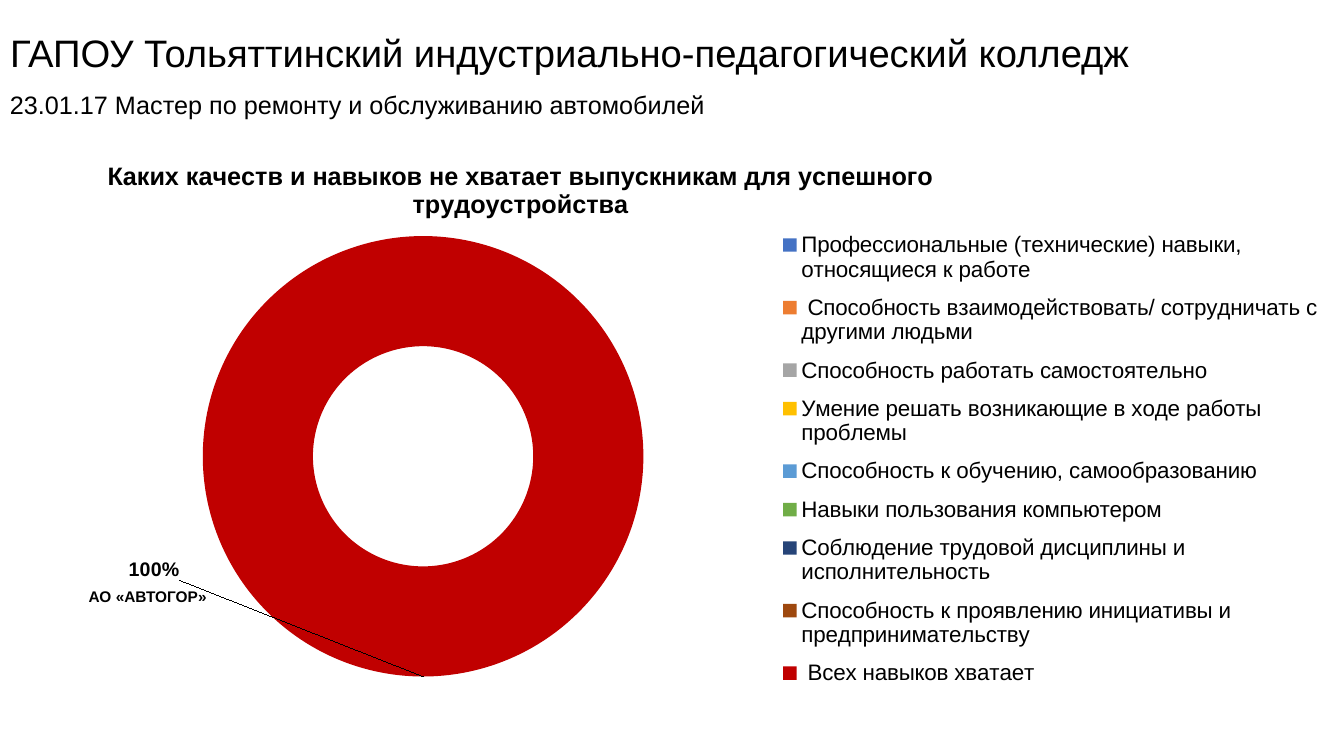
from lxml.etree import SubElement
from pptx import Presentation
from pptx.chart.data import CategoryChartData
from pptx.dml.color import RGBColor
from pptx.enum.chart import XL_CHART_TYPE, XL_LEGEND_POSITION
from pptx.enum.text import MSO_ANCHOR, MSO_AUTO_SIZE, PP_ALIGN
from pptx.oxml.ns import qn
from pptx.util import Inches, Pt

COLORS = {"text": "000000"}
SKILLS = {
    "Профессиональные (технические) навыки, относящиеся к работе": "4472C4",
    " Способность взаимодействовать/ сотрудничать с другими людьми": "ED7D31",
    "Способность работать самостоятельно": "A5A5A5",
    "Умение решать возникающие в ходе работы проблемы": "FFC000",
    "Способность к обучению, самообразованию": "5B9BD5",
    "Навыки пользования компьютером": "70AD47",
    "Соблюдение трудовой дисциплины и исполнительность": "264478",
    "Способность к проявлению инициативы и предпринимательству": "9E480E",
    " Всех навыков хватает": "C00000",
}


def style(font, size, bold=False, name="Arial"):
    font.name = name
    font.size = Pt(size)
    font.bold = bold
    font.color.rgb = RGBColor.from_string(COLORS["text"])


def place(parent, after, **values):
    for old in parent.findall(qn("c:layout")):
        parent.remove(old)
    layout = SubElement(parent, qn("c:layout"))
    manual = SubElement(layout, qn("c:manualLayout"))
    for tag, value in values.items():
        SubElement(manual, qn("c:" + tag)).set("val", str(value))
    if after is None:
        parent.insert(0, layout)
    else:
        parent.find(qn(after)).addnext(layout)


prs = Presentation()
prs.slide_width, prs.slide_height = Inches(13.33), Inches(7.5)
slide = prs.slides.add_slide(prs.slide_layouts[5])

data = CategoryChartData(number_format="0%")
data.categories = list(SKILLS)
data.add_series("Series 1", [0] * (len(SKILLS) - 1) + [1])
chart = slide.shapes.add_chart(
    XL_CHART_TYPE.DOUGHNUT, Inches(0.64), Inches(1.48), Inches(12.7), Inches(5.75), data
).chart
style(chart.font, 10, name="Calibri")

chart.has_title = True
head = chart.chart_title.text_frame
head.text = "Каких качеств и навыков не хватает выпускникам для успешного трудоустройства"
style(head.paragraphs[0].runs[0].font, 18, True)
place(chart.chart_title._element, "c:tx", xMode="edge", yMode="edge", x=0.03, y=0.01)

chart.has_legend = True
legend = chart.legend
legend.position = XL_LEGEND_POSITION.RIGHT
legend.include_in_layout = False
style(legend.font, 16)
place(legend._element, "c:legendPos", xMode="edge", yMode="edge", x=0.55, y=0.12, w=0.44, h=0.83)

area = chart._chartSpace.chart.plotArea
place(area, None, layoutTarget="inner", xMode="edge", yMode="edge", x=0.1, y=0.15, w=0.36, h=0.76)

series = chart.plots[0].series[0]
for index, color in enumerate(SKILLS.values()):
    shade = series.points[index].format
    shade.fill.solid()
    shade.fill.fore_color.rgb = RGBColor.from_string(color)
    shade.line.fill.background()

labels = series.data_labels
labels.show_value = True
labels.number_format = "0%"
labels.number_format_is_linked = False
style(labels.font, 14, True)
last = len(SKILLS) - 1
for index in range(len(SKILLS)):
    label = labels._element._insert_dLbl_in_sequence(index)
    if index == last:
        place(label, "c:idx", x=-0.21, y=-0.09)
        style(series.points[index].data_label.font, 14, True)
        label.find(qn("c:showPercent")).set("val", "0")
    else:
        for child in list(label)[1:]:
            label.remove(child)
        SubElement(label, qn("c:delete")).set("val", "1")
lead = labels._element.find(qn("c:showLeaderLines"))
if lead is None:
    lead = SubElement(labels._element, qn("c:showLeaderLines"))
lead.set("val", "1")

firm = slide.shapes.add_textbox(Inches(0.78), Inches(5.78), Inches(2.6), Inches(0.29))
firm.text_frame.word_wrap = True
firm.text_frame.auto_size = MSO_AUTO_SIZE.SHAPE_TO_FIT_TEXT
firm.text_frame.text = "АО «АВТОГОР»"
style(firm.text_frame.paragraphs[0].runs[0].font, 11, True)

trade = slide.shapes.add_textbox(0, Inches(0.87), Inches(12.05), Inches(0.83))
trade.text_frame.word_wrap = True
trade.text_frame.text = "23.01.17 Мастер по ремонту и обслуживанию автомобилей"
line = trade.text_frame.paragraphs[0]
line.line_spacing = 0.9
line.space_before = Pt(10)
style(line.runs[0].font, 18)

title = slide.shapes.title
title.left, title.top = Inches(0), Inches(0.01)
title.width, title.height = Inches(13.33), Inches(1.08)
title.text_frame.text = "ГАПОУ Тольяттинский индустриально-педагогический колледж"
title.text_frame.vertical_anchor = MSO_ANCHOR.MIDDLE
title.text_frame.auto_size = MSO_AUTO_SIZE.NONE
line = title.text_frame.paragraphs[0]
line.alignment = PP_ALIGN.LEFT
line.line_spacing = 0.9
style(line.runs[0].font, 27.3)

prs.save("out.pptx")
